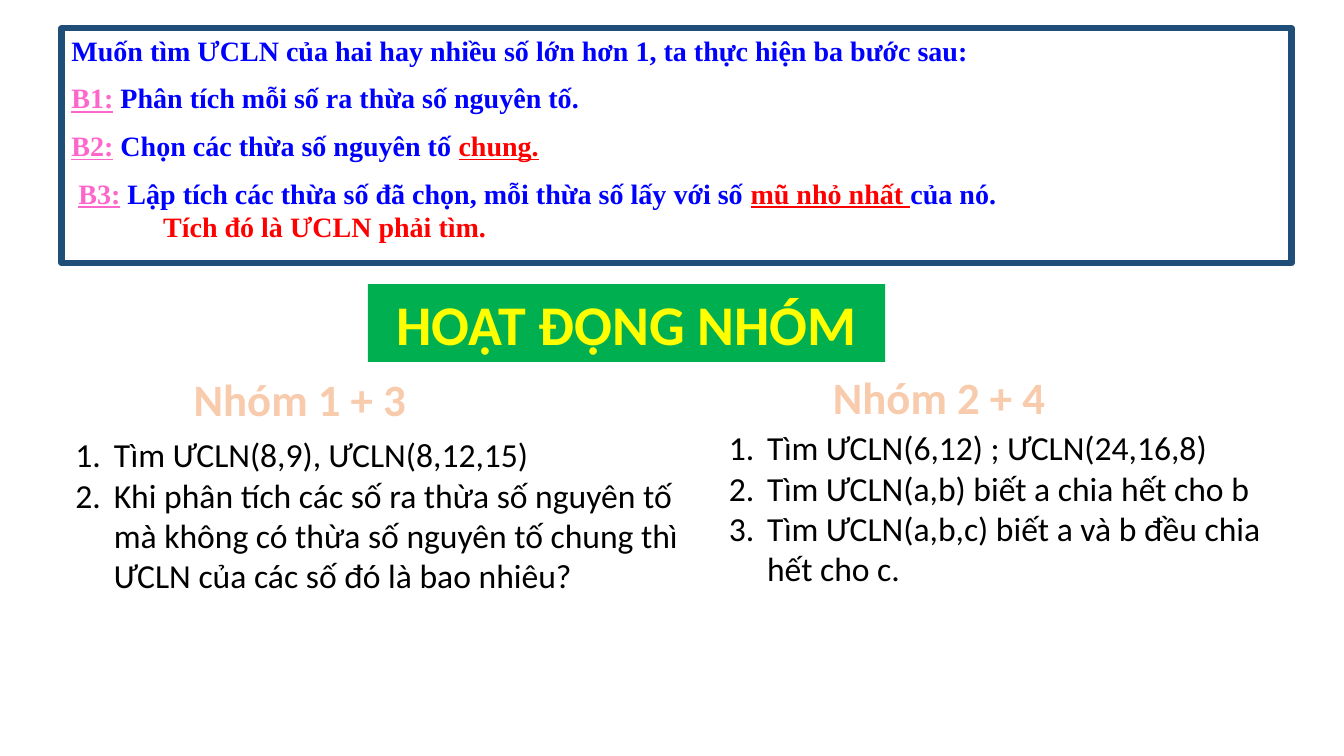
from lxml import etree
from pptx import Presentation
from pptx.dml.color import RGBColor
from pptx.enum.shapes import MSO_SHAPE
from pptx.enum.text import MSO_ANCHOR, PP_ALIGN
from pptx.oxml.ns import qn
from pptx.util import Inches, Pt

RECTANGLE = MSO_SHAPE.RECTANGLE
TOP = MSO_ANCHOR.TOP
LEFT, CENTER = PP_ALIGN.LEFT, PP_ALIGN.CENTER

COLORS = {
    "navy": "1F4E79", "blue": "0000FF", "pink": "FF66CC", "red": "FF0000",
    "green": "00B050", "yellow": "FFFF00", "white": "FFFFFF",
    "peach": "F8CBAD", "orange": "ED7D31", "black": "000000",
}
RULE = {"name": "Times New Roman", "size": Pt(20), "bold": True}
BANNER = {"name": "Calibri", "size": Pt(40), "bold": True}
HEADING = {"name": "Calibri", "size": Pt(32), "bold": True}
TASK = {"name": "Calibri", "size": Pt(24)}

STEPS = [
    (0, 10, [("Muốn tìm ƯCLN của hai hay nhiều số lớn hơn 1, "
              "ta thực hiện ba bước sau:", "blue", False)]),
    (0, 10, [("B1:", "pink", True),
             (" Phân tích mỗi số ra thừa số nguyên tố.", "blue", False)]),
    (0, 10, [("B2:", "pink", True),
             (" Chọn các thừa số nguyên tố ", "blue", False),
             ("chung.", "red", True)]),
    (0.07, 10, [("B3:", "pink", True),
                (" Lập tích các thừa số đã chọn, mỗi thừa số lấy với số ", "blue", False),
                ("mũ nhỏ nhất ", "red", True),
                ("của nó.", "blue", False)]),
    (0.91, 0, [("Tích đó là ƯCLN phải tìm.", "red", False)]),
]
GROUPS = [
    ("Nhóm 1 + 3 ", (1.81, 3.64, 2.43, 0.64), (0.65, 4.26, 6.38, 1.72), [
        "Tìm ƯCLN(8,9), ƯCLN(8,12,15)",
        "Khi phân tích các số ra thừa số nguyên tố mà không có thừa số nguyên tố "
        "chung thì ƯCLN của các số đó là bao nhiêu?",
    ]),
    ("Nhóm 2 + 4 ", (8.15, 3.62, 2.43, 0.64), (7.13, 4.19, 5.87, 1.72), [
        "Tìm ƯCLN(6,12) ; ƯCLN(24,16,8)",
        "Tìm ƯCLN(a,b) biết a chia hết cho b",
        "Tìm ƯCLN(a,b,c) biết a và b đều chia hết cho c.",
    ]),
]


class SlideBuilder:
    def __init__(self, page):
        self.page = page

    def color(self, name):
        return RGBColor.from_string(COLORS[name])

    def panel(self, place, fill=None, line=None):
        box = self.page.shapes.add_shape(RECTANGLE, *map(Inches, place))
        box.shadow.inherit = False
        if fill:
            box.fill.solid()
            box.fill.fore_color.rgb = self.color(fill)
        else:
            box.fill.background()
        if line:
            box.line.color.rgb = self.color(line)
            box.line.width = Pt(4.5)
        else:
            box.line.fill.background()
        return self.frame(box)

    def text_box(self, place, wrap=True):
        return self.frame(self.page.shapes.add_textbox(*map(Inches, place)), wrap)

    def frame(self, box, wrap=True):
        box.text_frame.word_wrap = wrap
        box.text_frame.vertical_anchor = TOP
        return box.text_frame

    def paragraph(self, frame, first, align=LEFT, before=0):
        para = frame.paragraphs[0] if first else frame.add_paragraph()
        para.alignment = align
        para.space_before = Pt(before)
        return para

    def indent(self, para, left, hanging=0):
        properties = para._p.get_or_add_pPr()
        properties.set("marL", str(Inches(left)))
        properties.set("indent", str(-Inches(hanging)))
        return properties

    def span(self, para, text, style, color, underline=False):
        span = para.add_run()
        span.text = text
        for key, value in {**style, "underline": underline}.items():
            setattr(span.font, key, value)
        span.font.color.rgb = self.color(color)
        return span

    def title(self, frame, text, style, color, outline, width):
        para = self.paragraph(frame, True, CENTER)
        span = self.span(para, text, style, color)
        line = etree.Element(qn("a:ln"), w=str(Pt(width)))
        fill = etree.SubElement(line, qn("a:solidFill"))
        etree.SubElement(fill, qn("a:srgbClr"), val=COLORS[outline])
        span._r.get_or_add_rPr().insert(0, line)

    def steps(self, frame, steps):
        for index, (left, before, spans) in enumerate(steps):
            para = self.paragraph(frame, index == 0, before=before)
            self.indent(para, left)
            for text, color, underline in spans:
                self.span(para, text, RULE, color, underline)

    def numbered_list(self, place, items):
        frame = self.text_box(place)
        for index, item in enumerate(items):
            para = self.paragraph(frame, index == 0)
            properties = self.indent(para, 0.38, 0.38)
            etree.SubElement(properties, qn("a:buFont"), typeface="+mj-lt")
            etree.SubElement(properties, qn("a:buAutoNum"), type="arabicPeriod")
            self.span(para, item, TASK, "black")


def main():
    deck = Presentation()
    deck.slide_width, deck.slide_height = Inches(13.33), Inches(7.5)
    builder = SlideBuilder(deck.slides.add_slide(deck.slide_layouts[6]))

    builder.steps(builder.panel((0.61, 0.28, 12.2, 2.33), line="navy"), STEPS)
    banner = builder.panel((3.65, 2.82, 5.13, 0.77), fill="green")
    builder.title(banner, "HOẠT ĐỘNG NHÓM", BANNER, "yellow", "white", 0.75)
    for heading, heading_place, list_place, tasks in GROUPS:
        frame = builder.text_box(heading_place, wrap=False)
        builder.title(frame, heading, HEADING, "peach", "orange", 1.75)
        builder.numbered_list(list_place, tasks)

    deck.save("out.pptx")


if __name__ == "__main__":
    main()
